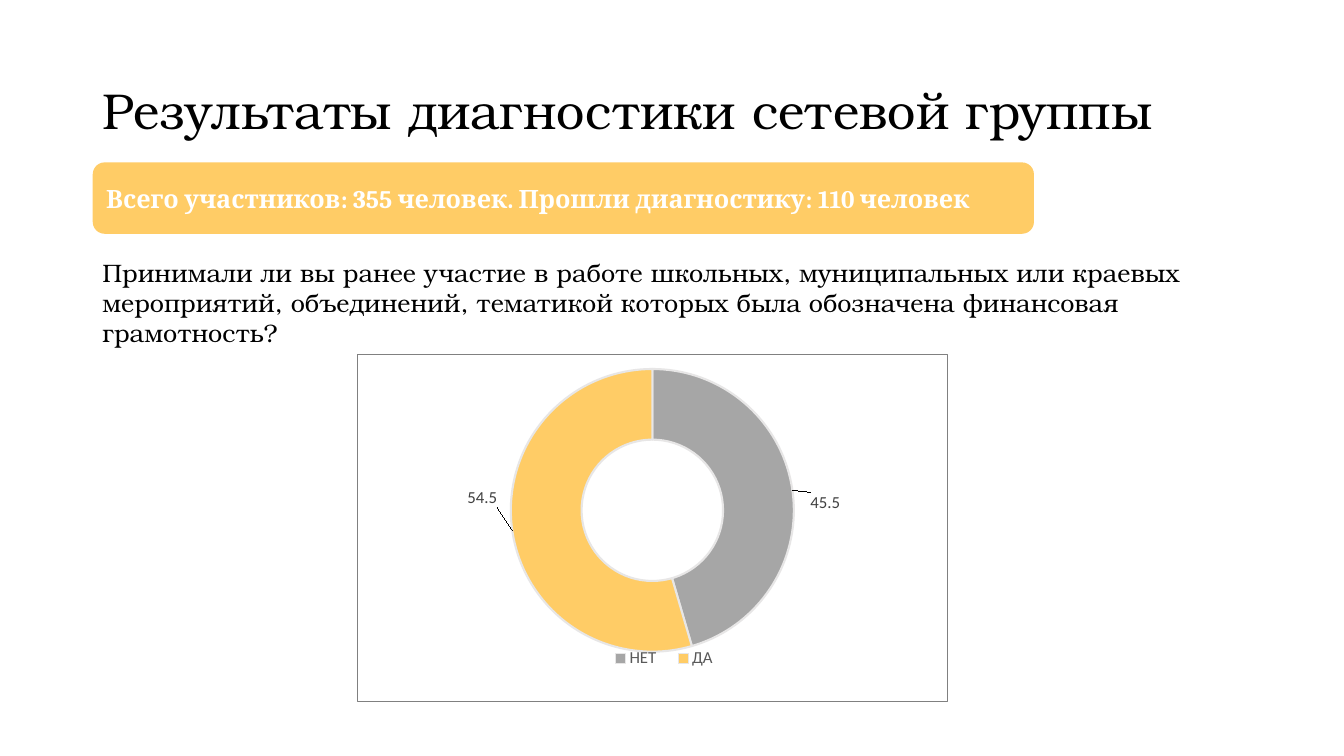
from pptx import Presentation
from pptx.chart.data import CategoryChartData
from pptx.dml.color import RGBColor
from pptx.enum.chart import XL_CHART_TYPE, XL_LEGEND_POSITION
from pptx.enum.shapes import MSO_SHAPE
from pptx.enum.text import MSO_ANCHOR, PP_ALIGN
from pptx.oxml import parse_xml
from pptx.oxml.ns import nsdecls, qn
from pptx.util import Pt

# Content: box (left, top, width, height in points), text, format
TITLE = dict(
    box=(66, 28.8, 828, 104.4), text="Результаты диагностики сетевой группы",
    anchor=MSO_ANCHOR.MIDDLE, spacing=0.9,
    font=dict(name="TeX Gyre Bonum", size=36, color="000000"))
BANNER = dict(
    box=(66.24, 116, 672.3, 51), fill="FFCC66",
    text="Всего участников: 355 человек. Прошли диагностику: 110 человек",
    anchor=MSO_ANCHOR.MIDDLE, spacing=1,
    font=dict(name="Cambria", size=18, color="FFFFFF", bold=True))
QUESTION = dict(
    box=(66, 180, 846.7, 72.7),
    text="Принимали ли вы ранее участие в работе школьных, муниципальных или "
         "краевых мероприятий, объединений, тематикой которых была обозначена "
         "финансовая грамотность?",
    anchor=MSO_ANCHOR.TOP, spacing=1,
    font=dict(name="TeX Gyre Bonum", size=18, color="000000"))

CHART_BOX = (255, 252.5, 422, 249)
# Answer, share, colour, label shift as a fraction of the chart
ANSWERS = [("НЕТ", 45.5, "A6A6A6", (0.115, 0.02)),
           ("ДА", 54.5, "FFCC66", (-0.11, -0.08))]
RING_AREA = dict(x=0.26, y=0.04, w=0.48, h=0.82)
LEGEND_AREA = dict(x=0.41, y=0.84, w=0.22, h=0.07)
CHART_FONT = dict(name="Calibri", size=10, color="000000")
LEGEND_FONT = dict(name="Calibri", size=12, color="595959")
LABEL_FONT = dict(name="Calibri", size=12, color="404040")


def rgb(value):
    return RGBColor.from_string(value)


def points(box):
    return [Pt(length) for length in box]


def set_font(font, values):
    for key, value in values.items():
        if key == "color":
            font.color.rgb = rgb(value)
        else:
            setattr(font, key, Pt(value) if key == "size" else value)


def write(shape, item):
    frame = shape.text_frame
    frame.word_wrap = True
    frame.vertical_anchor = item["anchor"]
    para = frame.paragraphs[0]
    para.alignment = PP_ALIGN.LEFT
    para.line_spacing = item["spacing"]
    span = para.add_run()
    span.text = item["text"]
    set_font(span.font, item["font"])


def layout(area, fixed=True):
    modes = "".join(f'<c:{axis}Mode val="edge"/>' for axis in "xy") if fixed else ""
    inner = '<c:layoutTarget val="inner"/>' if area is RING_AREA else ""
    sizes = "".join(f'<c:{key} val="{value}"/>' for key, value in area.items())
    return parse_xml(f'<c:layout {nsdecls("c")}><c:manualLayout>{inner}{modes}'
                     f'{sizes}</c:manualLayout></c:layout>')


def place(parent, area, after=None, fixed=True):
    for old in parent.findall(qn("c:layout")):
        parent.remove(old)
    index = 0 if after is None else parent.index(parent.find(qn(after))) + 1
    parent.insert(index, layout(area, fixed))


deck = Presentation()
deck.slide_width, deck.slide_height = Pt(960), Pt(540)
page = deck.slides.add_slide(deck.slide_layouts[6])

# Title, banner and question
write(page.shapes.add_textbox(*points(TITLE["box"])), TITLE)
banner = page.shapes.add_shape(MSO_SHAPE.ROUNDED_RECTANGLE, *points(BANNER["box"]))
banner.shadow.inherit = False
banner.fill.solid()
banner.fill.fore_color.rgb = rgb(BANNER["fill"])
banner.line.fill.background()
write(banner, BANNER)
write(page.shapes.add_textbox(*points(QUESTION["box"])), QUESTION)

# Doughnut of answers
data = CategoryChartData()
data.categories = [answer[0] for answer in ANSWERS]
data.add_series("Series 1", [answer[1] for answer in ANSWERS])
chart = page.shapes.add_chart(
    XL_CHART_TYPE.DOUGHNUT, *points(CHART_BOX), data).chart
chart.has_title = False
set_font(chart.font, CHART_FONT)
chart.has_legend = True
chart.legend.position = XL_LEGEND_POSITION.BOTTOM
chart.legend.include_in_layout = False
set_font(chart.legend.font, LEGEND_FONT)

plot = chart.plots[0]
plot.vary_by_categories = True
series = plot.series[0]
labels = series.data_labels
labels.show_value = True
set_font(labels.font, LABEL_FONT)
for index, (_, _, color, _) in enumerate(ANSWERS):
    point = series.points[index]
    point.format.fill.solid()
    point.format.fill.fore_color.rgb = rgb(color)
    point.format.line.color.rgb = rgb("E7E6E6")
    point.format.line.width = Pt(1.5)
    set_font(point.data_label.font, LABEL_FONT)

# Chart parts placed by hand: ring, legend, labels, hole and frame
root = chart.element if hasattr(chart, "element") else chart._chartSpace
place(next(root.iter(qn("c:plotArea"))), RING_AREA)
place(next(root.iter(qn("c:legend"))), LEGEND_AREA, after="c:legendPos")
for label, (_, _, _, (shift_x, shift_y)) in zip(root.iter(qn("c:dLbl")), ANSWERS):
    place(label, dict(x=shift_x, y=shift_y), after="c:idx", fixed=False)
next(root.iter(qn("c:holeSize"))).set("val", "75")
root.find(qn("c:chart")).addnext(parse_xml(
    f'<c:spPr {nsdecls("c", "a")}><a:noFill/><a:ln w="9525"><a:solidFill>'
    '<a:srgbClr val="808080"/></a:solidFill></a:ln></c:spPr>'))

deck.save("out.pptx")
